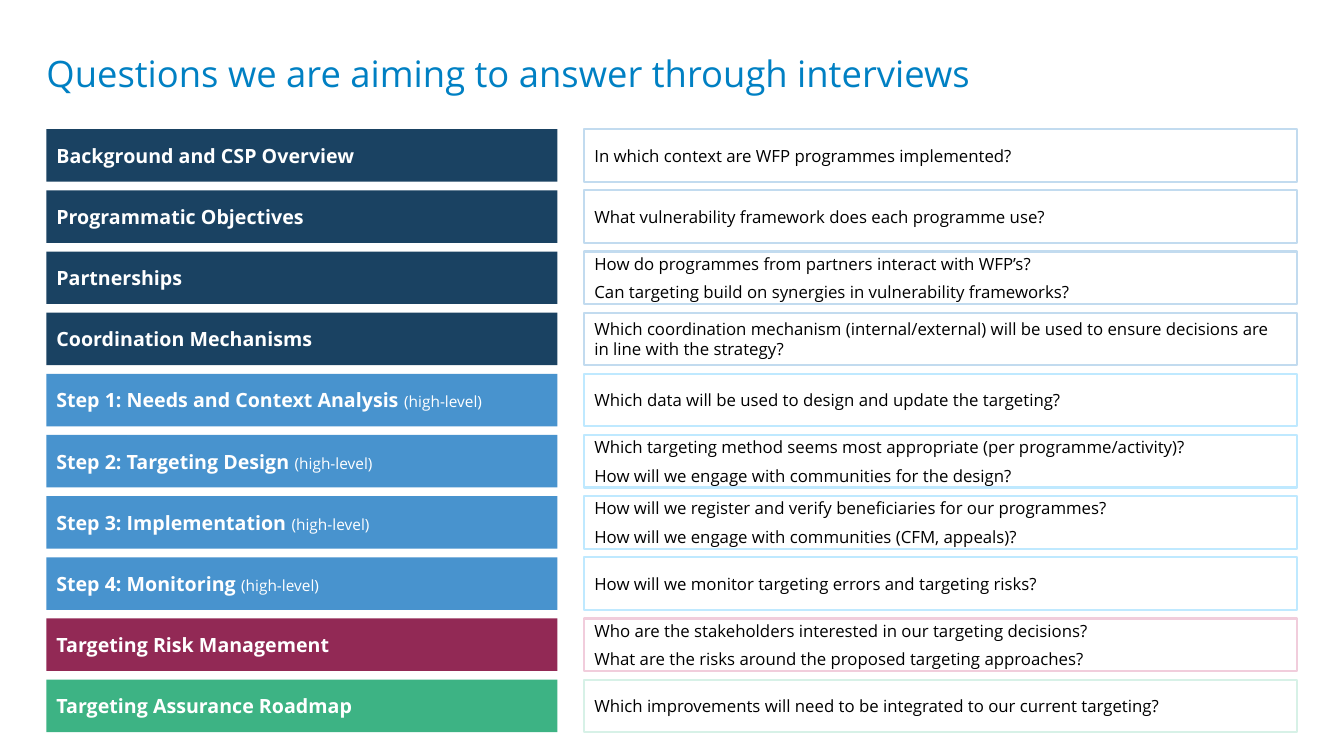
from dataclasses import dataclass

from pptx import Presentation
from pptx.dml.color import RGBColor
from pptx.enum.shapes import MSO_SHAPE
from pptx.enum.text import MSO_ANCHOR, PP_ALIGN
from pptx.shapes.autoshape import Shape
from pptx.slide import Slide
from pptx.text.text import _Run
from pptx.util import Pt

RECTANGLE = MSO_SHAPE.RECTANGLE
TOP, MIDDLE = MSO_ANCHOR.TOP, MSO_ANCHOR.MIDDLE
LEFT = PP_ALIGN.LEFT


@dataclass(frozen=True)
class Theme:
    font: str = "Open Sans"
    title: str = "0080C3"
    on_topic: str = "FFFFFF"
    question: str = "000000"
    title_size: float = 26
    topic_size: float = 14
    note_size: float = 11
    question_size: float = 12


@dataclass(frozen=True)
class Phase:
    fill: str
    outline: str


@dataclass(frozen=True)
class Topic:
    phase: Phase
    name: str
    questions: tuple[str, ...]
    note: str = ""


THEME = Theme()
CONTEXT = Phase("1A4262", "C2DBEF")
STEP = Phase("4893CE", "BFE9FF")
RISK = Phase("922955", "F1CDDC")
ROADMAP = Phase("3DB384", "D7F1E7")
HIGH_LEVEL = "(high-level)"

TOPICS = (
    Topic(CONTEXT, "Background and CSP Overview",
          ("In which context are WFP programmes implemented?",)),
    Topic(CONTEXT, "Programmatic Objectives",
          ("What vulnerability framework does each programme use?",)),
    Topic(CONTEXT, "Partnerships",
          ("How do programmes from partners interact with WFP’s?",
           "Can targeting build on synergies in vulnerability frameworks?")),
    Topic(CONTEXT, "Coordination Mechanisms",
          ("Which coordination mechanism (internal/external) will be used to "
           "ensure decisions are in line with the strategy?",)),
    Topic(STEP, "Step 1: Needs and Context Analysis ",
          ("Which data will be used to design and update the targeting?",), HIGH_LEVEL),
    Topic(STEP, "Step 2: Targeting Design ",
          ("Which targeting method seems most appropriate (per programme/activity)?",
           "How will we engage with communities for the design?"), HIGH_LEVEL),
    Topic(STEP, "Step 3: Implementation ",
          ("How will we register and verify beneficiaries for our programmes?",
           "How will we engage with communities (CFM, appeals)?"), HIGH_LEVEL),
    Topic(STEP, "Step 4: Monitoring ",
          ("How will we monitor targeting errors and targeting risks?",), HIGH_LEVEL),
    Topic(RISK, "Targeting Risk Management",
          ("Who are the stakeholders interested in our targeting decisions?",
           "What are the risks around the proposed targeting approaches?")),
    Topic(ROADMAP, "Targeting Assurance Roadmap",
          ("Which improvements will need to be integrated to our current targeting?",)),
)

# Layout in points
MARGIN = 33.2
TITLE_TOP, TITLE_WIDTH, TITLE_HEIGHT = 36.5, 895, 28
TOPIC_WIDTH = 365
QUESTION_LEFT, QUESTION_WIDTH = 417.5, 509
FIRST_ROW, ROW_PITCH, ROW_HEIGHT = 92.3, 43.68, 37.5
OUTLINE_WIDTH = 1.5
PARAGRAPH_GAP = 6


def style_run(run: _Run, size: float, color: str, bold: bool = False) -> None:
    run.font.name = THEME.font
    run.font.size = Pt(size)
    run.font.bold = bold
    run.font.color.rgb = RGBColor.from_string(color)


def add_box(slide: Slide, left: float, top: float, width: float,
            lines: tuple[str, ...], size: float, color: str, bold: bool = False) -> Shape:
    box = slide.shapes.add_shape(RECTANGLE, Pt(left), Pt(top), Pt(width), Pt(ROW_HEIGHT))
    box.shadow.inherit = False
    frame = box.text_frame
    frame.word_wrap = True
    frame.vertical_anchor = MIDDLE
    frame.text = "\n".join(lines)
    for paragraph in frame.paragraphs:
        paragraph.alignment = LEFT
        paragraph.space_after = Pt(PARAGRAPH_GAP)
        style_run(paragraph.runs[0], size, color, bold)
    return box


def add_topic(slide: Slide, topic: Topic, top: float) -> None:
    # Topic bar
    bar = add_box(slide, MARGIN, top, TOPIC_WIDTH, (topic.name,),
                  THEME.topic_size, THEME.on_topic, bold=True)
    bar.fill.solid()
    bar.fill.fore_color.rgb = RGBColor.from_string(topic.phase.fill)
    bar.line.fill.background()
    if topic.note:
        note = bar.text_frame.paragraphs[0].add_run()
        note.text = topic.note
        style_run(note, THEME.note_size, THEME.on_topic)

    # Outlined questions
    questions = add_box(slide, QUESTION_LEFT, top, QUESTION_WIDTH, topic.questions,
                        THEME.question_size, THEME.question)
    questions.fill.background()
    questions.line.color.rgb = RGBColor.from_string(topic.phase.outline)
    questions.line.width = Pt(OUTLINE_WIDTH)


def add_title(slide: Slide, text: str) -> None:
    title = slide.shapes.add_textbox(Pt(MARGIN), Pt(TITLE_TOP),
                                     Pt(TITLE_WIDTH), Pt(TITLE_HEIGHT))
    frame = title.text_frame
    frame.word_wrap = True
    frame.vertical_anchor = TOP
    frame.margin_left = frame.margin_right = frame.margin_top = frame.margin_bottom = 0
    frame.text = text
    style_run(frame.paragraphs[0].runs[0], THEME.title_size, THEME.title)


def main() -> None:
    deck = Presentation()
    deck.slide_width, deck.slide_height = Pt(960), Pt(540)
    slide = deck.slides.add_slide(deck.slide_layouts[6])
    add_title(slide, "Questions we are aiming to answer through interviews")
    for row, topic in enumerate(TOPICS):
        add_topic(slide, topic, FIRST_ROW + row * ROW_PITCH)
    deck.save("out.pptx")


if __name__ == "__main__":
    main()
